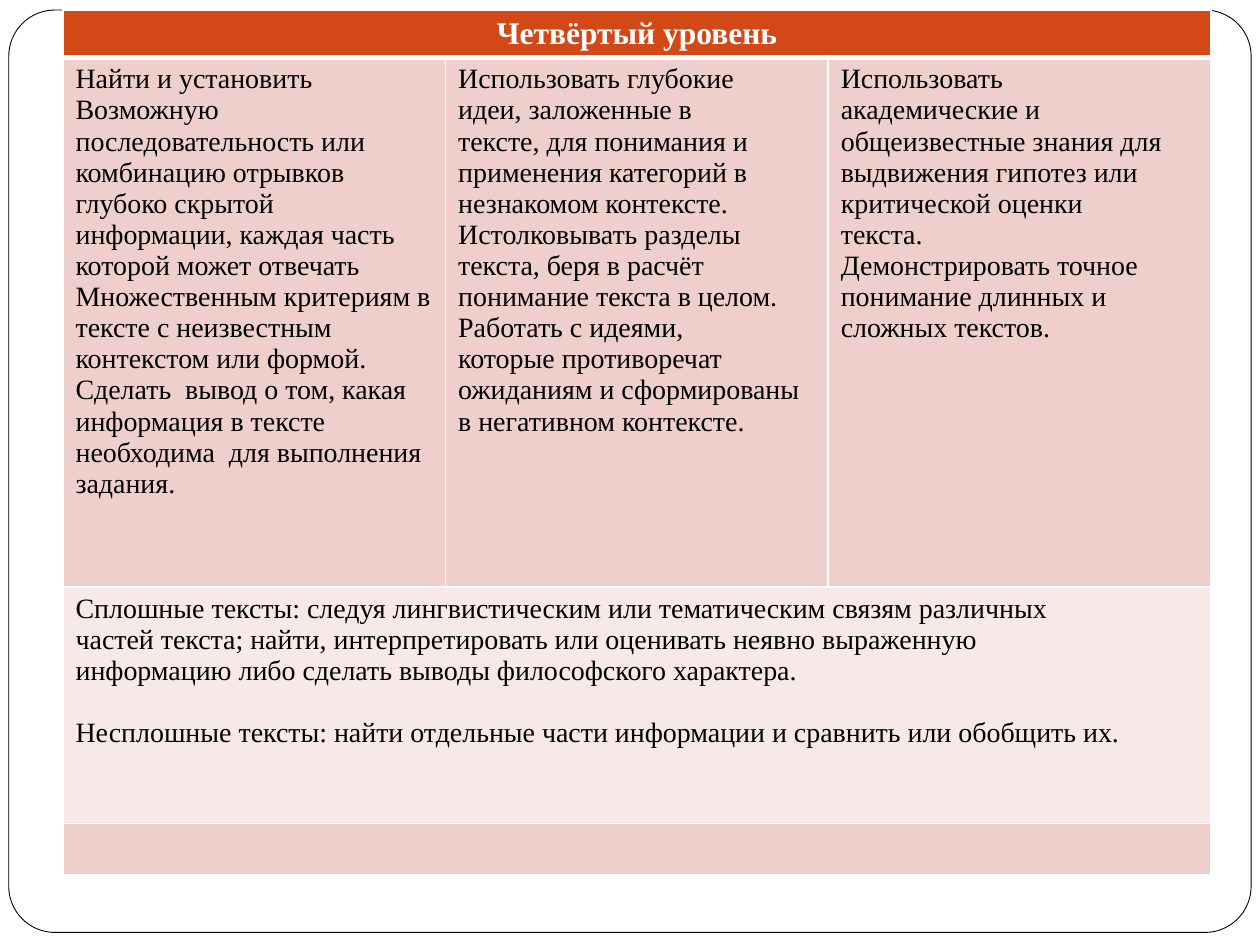
from dataclasses import dataclass

from lxml import etree
from pptx import Presentation
from pptx.dml.color import RGBColor
from pptx.enum.shapes import MSO_SHAPE
from pptx.enum.text import PP_ALIGN
from pptx.oxml.ns import qn
from pptx.table import Table, _Cell
from pptx.util import Inches, Pt

ROUNDED = MSO_SHAPE.ROUNDED_RECTANGLE
LEFT, CENTER = PP_ALIGN.LEFT, PP_ALIGN.CENTER


@dataclass(frozen=True)
class Theme:
    font: str = "Times New Roman"
    white: str = "FFFFFF"
    black: str = "000000"
    header: str = "D34817"
    band_dark: str = "EFCFCC"
    band_light: str = "F7E9E8"
    header_size: int = 18
    body_size: int = 16
    rule: int = 1
    header_rule: int = 3
    frame_line: float = 0.5


THEME = Theme()


@dataclass(frozen=True)
class LevelRow:
    """One table row; a single cell spans the full width."""
    height: float
    fill: str
    cells: tuple[tuple[str, ...], ...]
    is_header: bool = False


FIND_INFORMATION = (
    "Найти и установить",
    "Возможную последовательность или",
    "комбинацию отрывков",
    "глубоко скрытой",
    "информации, каждая часть",
    "которой может отвечать",
    "Множественным критериям в тексте с неизвестным контекстом или формой. "
    "Сделать  вывод о том, какая",
    "информация в тексте",
    "необходима  для выполнения задания.",
)
INTERPRET_TEXT = (
    "Использовать глубокие",
    "идеи, заложенные в",
    "тексте, для понимания и",
    "применения категорий в",
    "незнакомом контексте.",
    "Истолковывать разделы",
    "текста, беря в расчёт",
    "понимание текста в целом.",
    "Работать с идеями,",
    "которые противоречат",
    "ожиданиям и сформированы",
    "в негативном контексте.",
)
EVALUATE_TEXT = (
    "Использовать",
    "академические и",
    "общеизвестные знания для выдвижения гипотез или критической оценки",
    "текста.",
    "Демонстрировать точное",
    "понимание длинных и",
    "сложных текстов.",
)
TEXT_TYPES = (
    "Сплошные тексты: следуя лингвистическим или тематическим связям различных",
    "частей текста; найти, интерпретировать или оценивать неявно выраженную",
    "информацию либо сделать выводы философского характера.",
    "Несплошные тексты: найти отдельные части информации и сравнить или обобщить их.",
)

# The header row grows to fit its text
ROWS = (
    LevelRow(0.18, THEME.header, (("Четвёртый уровень",),), is_header=True),
    LevelRow(4.2, THEME.band_dark, (FIND_INFORMATION, INTERPRET_TEXT, EVALUATE_TEXT)),
    LevelRow(1.88, THEME.band_light, (TEXT_TYPES,)),
    LevelRow(0.38, THEME.band_dark, ((),)),
)
COLUMN_COUNT = 3
TABLE_WIDTH = 9.11


def rgb(color: str) -> RGBColor:
    return RGBColor.from_string(color)


def write_text(cell: _Cell, lines: tuple[str, ...], *, size: int, color: str,
               bold: bool = False, align: PP_ALIGN = LEFT) -> None:
    for index, line in enumerate(lines):
        frame = cell.text_frame
        paragraph = frame.add_paragraph() if index else frame.paragraphs[0]
        paragraph.alignment = align
        # Solid and non-continuous texts are set one line apart
        if line.startswith("Несплошные"):
            paragraph.space_before = Pt(18)
        run = paragraph.add_run()
        run.text = line
        run.font.name = THEME.font
        run.font.size = Pt(size)
        run.font.bold = bold
        run.font.color.rgb = rgb(color)


def draw_borders(cell: _Cell, *, top: int, bottom: int) -> None:
    properties = cell._tc.get_or_add_tcPr()
    widths = {"a:lnL": THEME.rule, "a:lnR": THEME.rule, "a:lnT": top, "a:lnB": bottom}
    for side, width in widths.items():
        line = etree.SubElement(properties, qn(side), w=str(Pt(width)))
        fill = etree.SubElement(line, qn("a:solidFill"))
        etree.SubElement(fill, qn("a:srgbClr"), val=THEME.white)


def fill_row(table: Table, index: int, row: LevelRow) -> None:
    table.rows[index].height = Inches(row.height)
    below_header = index > 0 and ROWS[index - 1].is_header
    for column in range(COLUMN_COUNT):
        cell = table.cell(index, column)
        draw_borders(cell,
                     top=THEME.header_rule if below_header else THEME.rule,
                     bottom=THEME.header_rule if row.is_header else THEME.rule)
        cell.fill.solid()
        cell.fill.fore_color.rgb = rgb(row.fill)
    if len(row.cells) == 1:
        table.cell(index, 0).merge(table.cell(index, COLUMN_COUNT - 1))
    for column, lines in enumerate(row.cells):
        write_text(table.cell(index, column), lines,
                   size=THEME.header_size if row.is_header else THEME.body_size,
                   color=THEME.white if row.is_header else THEME.black,
                   bold=row.is_header,
                   align=CENTER if row.is_header else LEFT)


def main() -> None:
    deck = Presentation()
    deck.slide_width, deck.slide_height = Inches(10), Inches(7.5)
    slide = deck.slides.add_slide(deck.slide_layouts[6])

    # Rounded page frame
    frame = slide.shapes.add_shape(ROUNDED, Inches(0.07), Inches(0.08),
                                   Inches(9.86), Inches(7.32))
    frame.adjustments[0] = 0.05
    frame.shadow.inherit = False
    frame.fill.solid()
    frame.fill.fore_color.rgb = rgb(THEME.white)
    frame.line.color.rgb = rgb(THEME.black)
    frame.line.width = Pt(THEME.frame_line)

    # Table of reading skills
    table = slide.shapes.add_table(len(ROWS), COLUMN_COUNT, Inches(0.5), Inches(0.08),
                                   Inches(TABLE_WIDTH), Inches(7)).table
    table.horz_banding = False
    for column in table.columns:
        column.width = Inches(TABLE_WIDTH / COLUMN_COUNT)
    for index, row in enumerate(ROWS):
        fill_row(table, index, row)

    deck.save("out.pptx")


if __name__ == "__main__":
    main()
